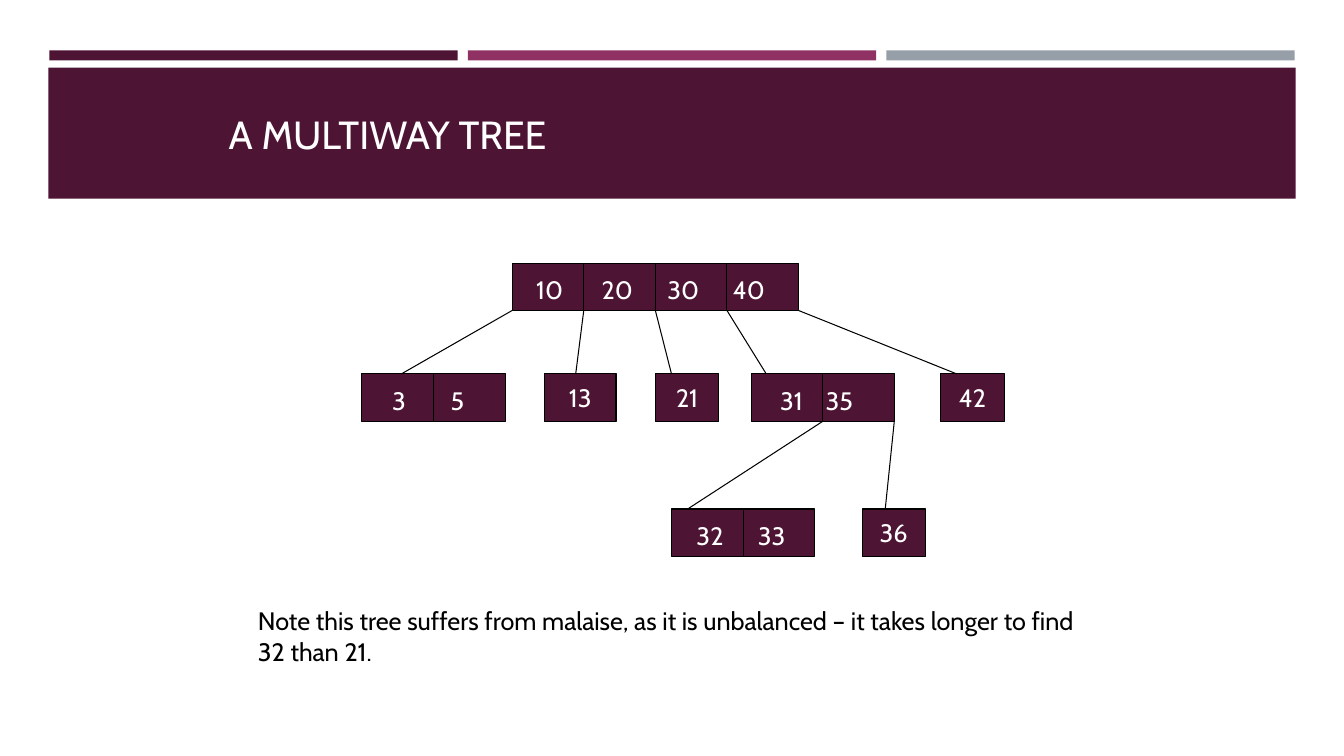
from pptx import Presentation
from pptx.dml.color import RGBColor
from pptx.enum.shapes import MSO_CONNECTOR as Line, MSO_SHAPE as Shape
from pptx.enum.text import MSO_ANCHOR as Anchor, PP_ALIGN as Align
from pptx.oxml.ns import qn
from pptx.util import Inches, Pt
from lxml.etree import SubElement

PLUM, MAGENTA, GREY = "4D1434", "903163", "969FA7"
WHITE, BLACK = "FFFFFF", "000000"
CELL, NODE_HEIGHT = 0.71, 0.47
TOP, BOTTOM = 0, 2  # connection sites of a rectangle


def rgb(value):
    return RGBColor.from_string(value)


class TreeSlide:
    font = "Cabin"

    def __init__(self, prs):
        self.slide = prs.slides.add_slide(prs.slide_layouts[6])
        self.shapes = self.slide.shapes

    def style(self, frame, size, color):
        for paragraph in frame.paragraphs:
            for run in paragraph.runs:
                run.font.name, run.font.size = self.font, Pt(size)
                run.font.color.rgb = rgb(color)

    def box(self, x, y, w, h, fill, outline=None):
        rect = self.shapes.add_shape(Shape.RECTANGLE, Inches(x), Inches(y), Inches(w), Inches(h))
        rect.shadow.inherit = False
        rect.fill.solid()
        rect.fill.fore_color.rgb = rgb(fill)
        if outline:
            rect.line.color.rgb = rgb(outline)
            rect.line.width = Pt(0.75)
        else:
            rect.line.fill.background()
        return rect

    def text(self, x, y, w, h, words, size=18, color=WHITE, anchor=Anchor.TOP):
        label = self.shapes.add_textbox(Inches(x), Inches(y), Inches(w), Inches(h))
        frame = label.text_frame
        frame.word_wrap = True
        frame.vertical_anchor = anchor
        frame.text = words
        self.style(frame, size, color)
        return frame

    def line(self, x1, y1, x2, y2):
        link = self.shapes.add_connector(
            Line.STRAIGHT, Inches(x1), Inches(y1), Inches(x2), Inches(y2))
        link.line.color.rgb = rgb(BLACK)
        link.line.width = Pt(0.75)
        SubElement(link._element.spPr, qn("a:effectLst"))
        return link

    def node(self, x, y, keys, width, indent, pitch):
        """A box of keys; a divider stands between neighbours."""
        rect = self.box(x, y, width, NODE_HEIGHT, PLUM, BLACK)
        if len(keys) == 1:
            frame = rect.text_frame
            frame.word_wrap = False
            frame.vertical_anchor = Anchor.MIDDLE
            frame.text = keys[0]
            frame.paragraphs[0].alignment = Align.CENTER
            self.style(frame, 18, WHITE)
            return rect
        for gap in range(1, len(keys)):
            divider_x = x + gap * CELL
            divider = self.line(divider_x, y, divider_x, y + NODE_HEIGHT)
            if gap * 2 == len(keys):
                divider.begin_connect(rect, TOP)
                divider.end_connect(rect, BOTTOM)
        # Keys are spaced by tab stops
        frame = self.text(x + indent, y + 0.06, width - indent, 0.4, "\t".join(keys))
        stops = SubElement(frame.paragraphs[0]._p.get_or_add_pPr(), qn("a:tabLst"))
        for gap in range(1, len(keys)):
            SubElement(stops, qn("a:tab"), pos=str(Inches(gap * pitch)), algn="l")
        return rect

    def edge(self, parent, x, y, keys, gap, child_x, child_y):
        """A link from one gap of a node down to the top of a child."""
        link = self.line(x + gap * CELL, y + NODE_HEIGHT, child_x, child_y)
        if gap * 2 == len(keys):
            link.begin_connect(parent, BOTTOM)


def main():
    prs = Presentation()
    prs.slide_width, prs.slide_height = Inches(13.33), Inches(7.5)
    tree = TreeSlide(prs)

    # Header bars and title band
    for column, color in enumerate((PLUM, MAGENTA, GREY)):
        tree.box(0.49 + column * 4.15, 0.5, 4.05, 0.1, color)
    tree.box(0.48, 0.67, 12.37, 1.3, PLUM)
    tree.text(2.17, 0.36, 9, 1.25, "A MULTIWAY TREE", 28, anchor=Anchor.BOTTOM)

    # Nodes: left, top, keys, width, text indent, key pitch
    root_y, child_y, leaf_y = 2.61, 3.71, 5.05
    root = (5.08, root_y, ("10", "20", "30", "40"), 4 * CELL, 0.14, 0.65)
    middle = (7.45, child_y, ("31", "35"), 2 * CELL, 0.19, 0.45)
    others = [
        (3.59, child_y, ("3", "5"), 2 * CELL, 0.2, 0.58),
        (5.4, child_y, ("13",), CELL, 0, 0),
        (6.5, child_y, ("21",), 0.63, 0, 0),
        (9.33, child_y, ("42",), 0.63, 0, 0),
        (6.66, leaf_y, ("32", "33"), 2 * CELL, 0.15, 0.61),
        (8.55, leaf_y, ("36",), 0.63, 0, 0),
    ]
    root_box, middle_box = tree.node(*root), tree.node(*middle)
    for other in others:
        tree.node(*other)

    # Edges to the children
    for gap, child_x in enumerate((3.98, 5.71, 6.66, 7.6, 9.49)):
        tree.edge(root_box, *root[:3], gap, child_x, child_y)
    for gap, leaf_x in enumerate((6.82, 8.78), start=1):
        tree.edge(middle_box, *middle[:3], gap, leaf_x, leaf_y)

    # Note
    tree.text(2.46, 5.96, 8.53, 0.71,
              "Note this tree suffers from malaise, as it is unbalanced – "
              "it takes longer to find 32 than 21.", color=BLACK)

    prs.save("out.pptx")


if __name__ == "__main__":
    main()
